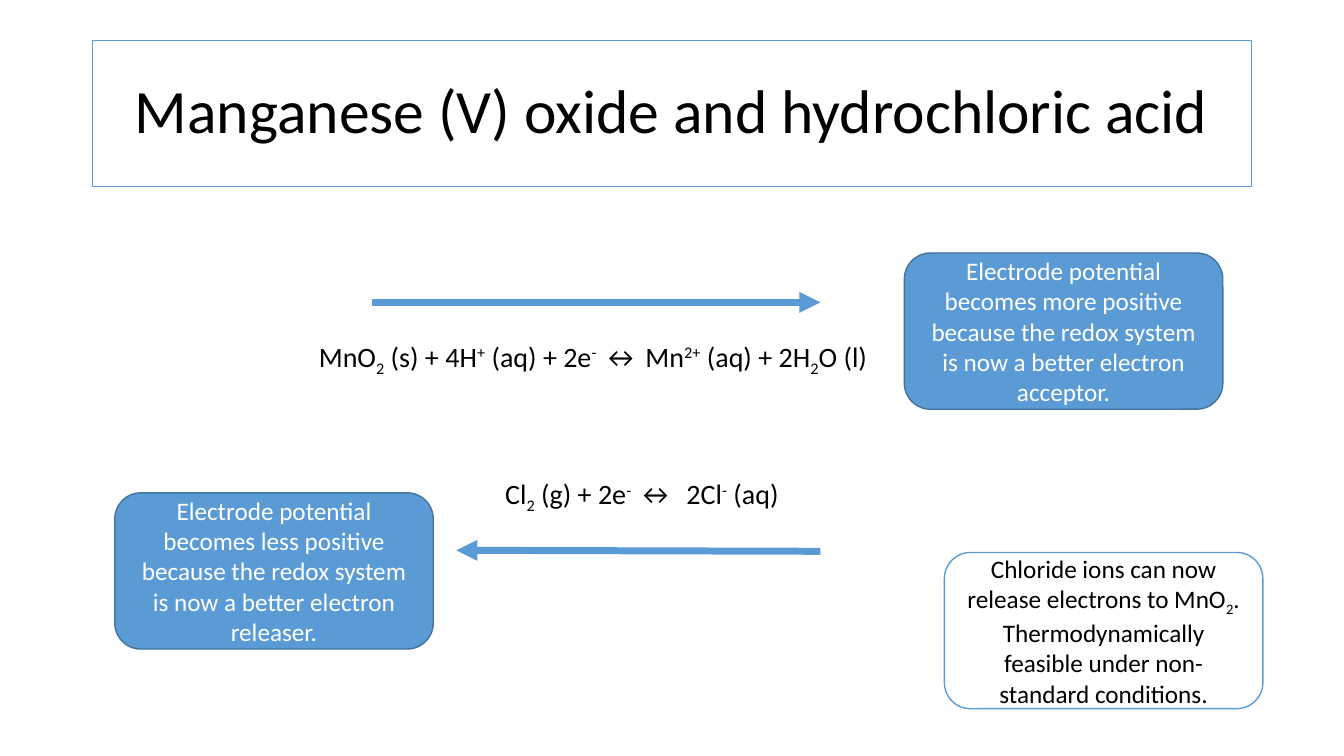
from pptx import Presentation
from pptx.dml.color import RGBColor
from pptx.enum import shapes as kinds, text as t
from pptx.oxml.ns import qn
from pptx.util import Pt
from lxml import etree

BLUE, EDGE, WHITE, BLACK = "5B9BD5", "43739E", "FFFFFF", "000000"
SHIFTS = {"_": "-25000", "^": "30000"}


def tint(code):
    return RGBColor.from_string(code)


def write(shape, words, size=18, color=BLACK, wrap=True, space=1):
    frame = shape.text_frame
    frame.word_wrap = wrap
    frame.auto_size = t.MSO_AUTO_SIZE.NONE
    frame.vertical_anchor = t.MSO_ANCHOR.MIDDLE
    para = frame.paragraphs[0]
    para.alignment = t.PP_ALIGN.CENTER
    para.line_spacing = space
    for part in words.split("|"):
        shift = SHIFTS.get(part[0])
        run = para.add_run()
        run.text = part[1:] if shift else part
        run.font.name = "Calibri"
        run.font.size = Pt(size)
        run.font.color.rgb = tint(color)
        if shift:
            run.font._element.set("baseline", shift)


def paint(shape, fill, line):
    shape.fill.solid()
    shape.fill.fore_color.rgb = tint(fill)
    shape.line.color.rgb = tint(line)
    shape.line.width = Pt(1)


def head(slide, left, top, width, height, words):
    title = slide.shapes.title
    title.left, title.top = Pt(left), Pt(top)
    title.width, title.height = Pt(width), Pt(height)
    paint(title, WHITE, BLUE)
    write(title, words, size=44, space=0.9)


def note(slide, left, top, words, fill=BLUE, line=EDGE, color=WHITE):
    box = slide.shapes.add_shape(
        kinds.MSO_SHAPE.ROUNDED_RECTANGLE, Pt(left), Pt(top), Pt(227.5), Pt(111.6))
    box.shadow.inherit = False
    paint(box, fill, line)
    write(box, words, color=color)


def half(slide, mid, top, words):
    wide = 420
    box = slide.shapes.add_textbox(Pt(mid - wide / 2), Pt(top), Pt(wide), Pt(32))
    write(box, words, size=20, wrap=False)


def arrow(slide, start, end):
    line = slide.shapes.add_connector(
        kinds.MSO_CONNECTOR.STRAIGHT, *map(Pt, start + end))
    line.line.color.rgb = tint(BLUE)
    line.line.width = Pt(5)
    etree.SubElement(line.line._get_or_add_ln(), qn("a:tailEnd"), type="triangle")
    etree.SubElement(line._element.spPr, qn("a:effectLst"))


def main():
    deck = Presentation()
    deck.slide_width, deck.slide_height = Pt(960), Pt(540)
    slide = deck.slides.add_slide(deck.slide_layouts[5])
    head(slide, 66, 28.75, 828, 104.4, "Manganese (V) oxide and hydrochloric acid")
    half(slide, 423.5, 240,
         "MnO|_2| (s) + 4H|^+| (aq) + 2e|^-| ↔ Mn|^2+| (aq) + 2H|_2|O (l)")
    half(slide, 458.5, 338, "Cl|_2| (g) + 2e|^-| ↔  2Cl|^-| (aq)")
    arrow(slide, (265.7, 216), (586, 216))
    arrow(slide, (586, 393.8), (326, 393.1))
    change = ("Electrode potential becomes {} positive because the redox system "
              "is now a better electron {}.")
    note(slide, 646, 180.7, change.format("more", "acceptor"))
    note(slide, 82, 352, change.format("less", "releaser"))
    note(slide, 674.6, 394.6,
         "Chloride ions can now release electrons to MnO|_2|. Thermodynamically "
         "feasible under non-standard conditions.",
         fill=WHITE, line=BLUE, color=BLACK)
    deck.save("out.pptx")


if __name__ == "__main__":
    main()
